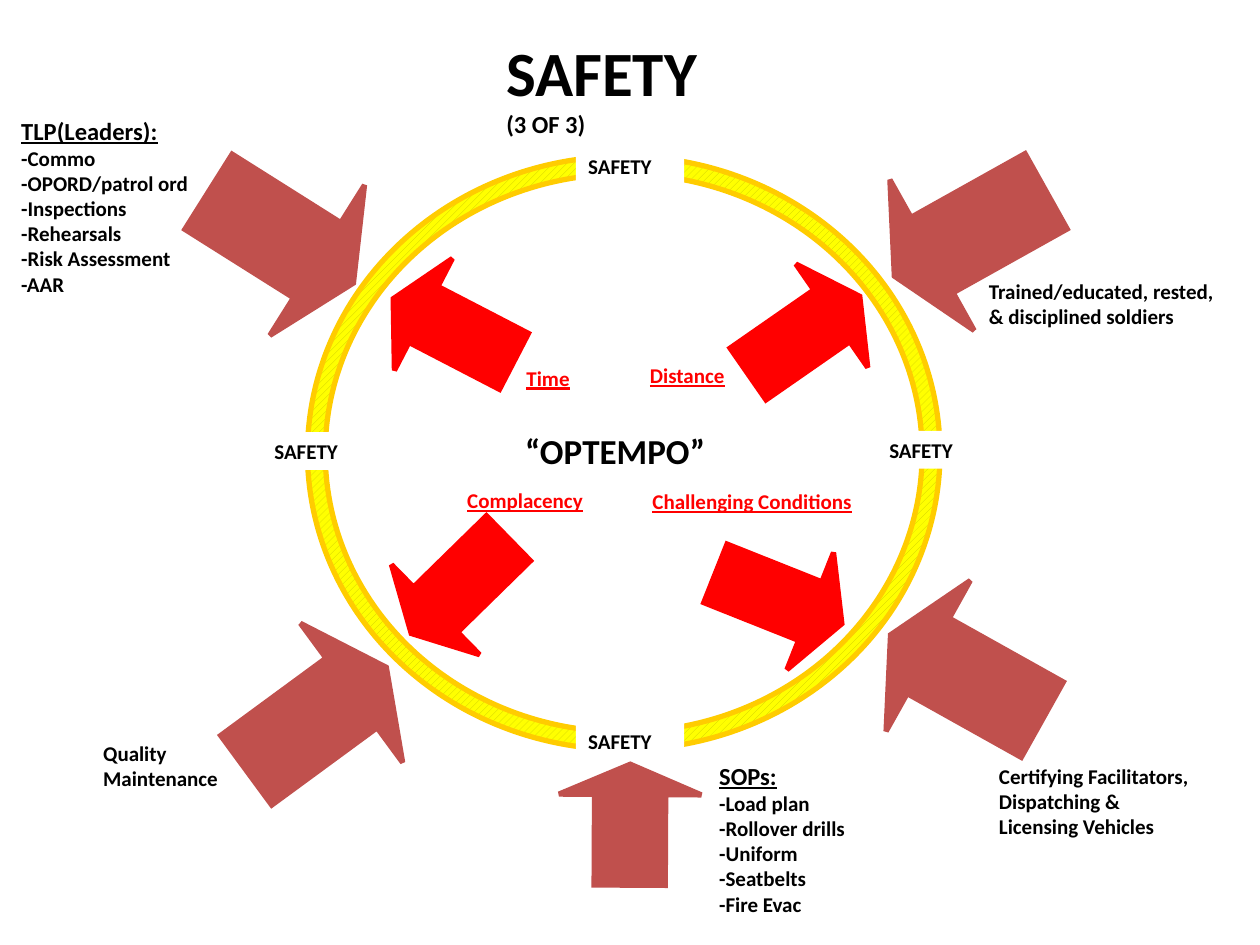
from typing import NamedTuple

from lxml.etree import SubElement
from pptx import Presentation
from pptx.dml.color import RGBColor
from pptx.enum.dml import MSO_PATTERN as Pattern
from pptx.enum.shapes import MSO_SHAPE as Shape
from pptx.enum.text import MSO_ANCHOR as Anchor, MSO_AUTO_SIZE as AutoSize, PP_ALIGN as Align
from pptx.oxml.ns import qn
from pptx.util import Inches, Pt

COLORS = {
    "ink": "000000",
    "paper": "FFFFFF",
    "hazard": "FF0000",
    "control": "C0504D",
    "ring_line": "FFCC00",
    "ring_back": "FFFF00",
    "ring_stripe": "CCCC00",
}
COLUMNS, ROWS = 100, 75
PAGE_WIDTH, PAGE_HEIGHT = Inches(10), Inches(7.5)

BASE = {"name": "Calibri", "bold": True, "underline": False}
BODY = {**BASE, "size": Pt(12)}
SUBTITLE = {**BASE, "size": Pt(14)}
HEADING = {**SUBTITLE, "underline": True}
HAZARD = {**BODY, "underline": True}
CENTER = {**BASE, "size": Pt(20)}
TITLE = {**BASE, "size": Pt(36)}


class Box(NamedTuple):
    left: float
    top: float
    width: float
    height: float

    def inner(self, left, top, width, height):
        return Box(self.left + left, self.top + top, width, height)

    def lengths(self):
        column, row = PAGE_WIDTH / COLUMNS, PAGE_HEIGHT / ROWS
        return [round(share * unit) for share, unit in zip(self, (column, row) * 2)]


def color(name):
    return RGBColor.from_string(COLORS[name])


def set_all(target, values):
    for name, value in values.items():
        setattr(target, name, value)


def write(holder, lines, ink="ink", wrap=False):
    frame = holder.text_frame
    set_all(frame, {"word_wrap": wrap, "auto_size": AutoSize.SHAPE_TO_FIT_TEXT,
                    "vertical_anchor": Anchor.TOP})
    for index, (words, style) in enumerate(lines):
        para = frame.add_paragraph() if index else frame.paragraphs[0]
        para.alignment = Align.LEFT
        span = para.add_run()
        span.text = words
        set_all(span.font, style)
        span.font.color.rgb = color(ink)


def add_text(page, box, lines, ink="ink", wrap=False):
    write(page.shapes.add_textbox(*box.lengths()), lines, ink, wrap)


def add_preset(page, kind, box, line=None, adjustments=()):
    shape = page.shapes.add_shape(kind, *box.lengths())
    shape.shadow.inherit = False
    for index, value in enumerate(adjustments):
        shape.adjustments[index] = value
    if line:
        shape.line.color.rgb = color(line)
        shape.line.width = Pt(3)
        outline = shape.element.spPr.find(qn("a:ln"))
        SubElement(outline, qn("a:miter"), lim="800000")
    else:
        shape.line.fill.background()
    return shape


def add_arrow(page, kind, box, turn, paint, head):
    arrow = add_preset(page, kind, box, paint, (0.5, head))
    arrow.rotation = turn
    arrow.fill.solid()
    arrow.fill.fore_color.rgb = color(paint)


def draw_header(page, box):
    add_text(page, box, [("SAFETY", TITLE), ("(3 OF 3)", SUBTITLE)])


def draw_hazards(page, box):
    add_text(page, box.inner(16.3, 21.2, 18.7, 4.3), [("“OPTEMPO”", CENTER)])
    for left, top, turn in [(7.1, 28.7, 45.6), (32.4, 29.7, 291.7),
                            (34.4, 8.8, 235.2), (6.6, 8.4, 117.4)]:
        add_arrow(page, Shape.DOWN_ARROW, box.inner(left, top, 10, 10.8), turn, "hazard", 0.27)
    for left, top, width, words in [
        (11.7, 25.8, 12.8, "Complacency"),
        (26.4, 25.9, 20.8, "Challenging Conditions"),
        (16.4, 16.1, 5.9, "Time"),
        (26.2, 15.9, 8.9, "Distance"),
    ]:
        add_text(page, box.inner(left, top, width, 3), [(words, HAZARD)], "hazard")


def draw_ring(page, box):
    ring = add_preset(page, Shape.DONUT, box, "ring_line", (0.03,))
    ring.fill.patterned()
    ring.fill.pattern = Pattern.WIDE_UPWARD_DIAGONAL
    ring.fill.fore_color.rgb = color("ring_stripe")
    ring.fill.back_color.rgb = color("ring_back")
    for left, top in [(21.3, -0.7), (-3.6, 21.9), (45.2, 21.8), (21.3, 44.9)]:
        label = add_preset(page, Shape.RECTANGLE, box.inner(left, top, 8.6, 3))
        label.fill.solid()
        label.fill.fore_color.rgb = color("paper")
        write(label, [("SAFETY", BODY)], wrap=True)


def draw_controls(page, box):
    for place, turn in [
        ((15.5, 11.8, 13.6, 14.1), 32.2),
        ((18.2, 50.2, 13.8, 13.7), 323.7),
        ((45.2, 59.8, 9.6, 11.3), 270.3),
        ((69.8, 46.9, 13.8, 13.7), 209.2),
        ((70.1, 11.7, 13.8, 13.7), 150.8),
    ]:
        add_arrow(page, Shape.RIGHT_ARROW, box.inner(*place), turn, "control", 0.25)
    for place, heading, items in [
        ((0.7, 8.7, 16.9, 15.3), "TLP(Leaders):",
         ["-Commo", "-OPORD/patrol ord", "-Inspections", "-Rehearsals",
          "-Risk Assessment", "-AAR"]),
        ((7.2, 58.3, 12.1, 5), None, ["Quality", "Maintenance"]),
        ((56.1, 59.9, 13.7, 13.3), "SOPs:",
         ["-Load plan", "-Rollover drills", "-Uniform", "-Seatbelts", "-Fire Evac"]),
        ((78.3, 60.1, 19.9, 7.1), None,
         ["Certifying Facilitators,", "Dispatching &", "Licensing Vehicles"]),
        ((77.5, 21.6, 22.8, 5.1), None,
         ["Trained/educated, rested,", "& disciplined soldiers"]),
    ]:
        lines = [(heading, HEADING)] if heading else []
        add_text(page, box.inner(*place), lines + [(item, BODY) for item in items])


def main():
    deck = Presentation()
    set_all(deck, {"slide_width": PAGE_WIDTH, "slide_height": PAGE_HEIGHT})
    page = deck.slides.add_slide(deck.slide_layouts[6])
    wheel = Box(24.4, 12.4, 50.2, 47.1)
    draw_header(page, Box(39.2, 2.2, 21.7, 9.3))
    draw_hazards(page, wheel)
    draw_ring(page, wheel)
    draw_controls(page, Box(0, 0, COLUMNS, ROWS))
    deck.save("out.pptx")


if __name__ == "__main__":
    main()
